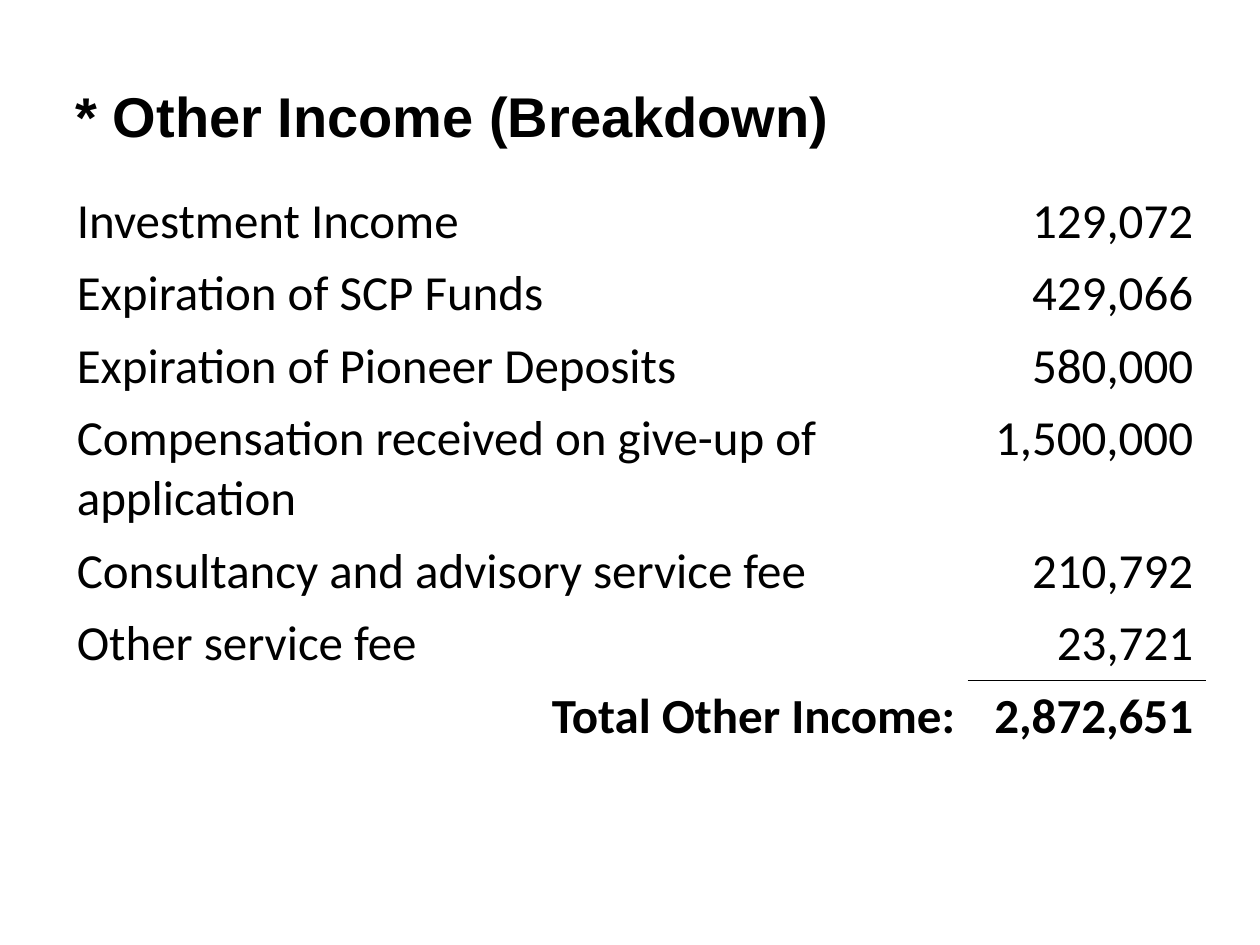
import pptx
import pptx.dml.color
import pptx.enum.text
import pptx.oxml
import pptx.oxml.ns
import pptx.util

Pt = pptx.util.Pt
ALIGN = pptx.enum.text.PP_ALIGN

COLORS = {"text": "000000", "rule": "000000", "background": "FFFFFF"}
TITLE = "* Other Income (Breakdown)"
INCOME = [
    ("Investment Income", "129,072"),
    ("Expiration of SCP Funds", "429,066"),
    ("Expiration of Pioneer Deposits", "580,000"),
    ("Compensation received on give-up of application", "1,500,000"),
    ("Consultancy and advisory service fee", "210,792"),
    ("Other service fee", "23,721"),
]
TOTAL = ("Total Other Income:", "2,872,651")

TABLE_LEFT, TABLE_TOP = 36.72, 105.84
COLUMN_WIDTHS = (516.24, 136.08)
ROW_HEIGHT = 37.44
NO_STYLE_NO_GRID = "{2D5ABB26-0587-4C30-8999-92F81FD0307C}"


def format_text(text_frame, alignment, font_name, size, bold):
    paragraph = text_frame.paragraphs[0]
    paragraph.alignment = alignment
    font = paragraph.runs[0].font
    font.name, font.size, font.bold = font_name, Pt(size), bold
    font.color.rgb = pptx.dml.color.RGBColor.from_string(COLORS["text"])


def add_border(cell, side):
    """Draw a 1 pt rule on one side of a cell: "T" or "B"."""
    border = pptx.oxml.parse_xml(
        f'<a:ln{side} {pptx.oxml.ns.nsdecls("a")} w="{Pt(1)}"><a:solidFill>'
        f'<a:srgbClr val="{COLORS["rule"]}"/></a:solidFill></a:ln{side}>'
    )
    cell._tc.get_or_add_tcPr().insert(0, border)


def add_title(slide):
    title = slide.shapes.title
    title.left, title.top = Pt(36), Pt(37.44)
    title.width, title.height = Pt(684), Pt(56.88)
    title.text_frame.text = TITLE
    title.text_frame.vertical_anchor = pptx.enum.text.MSO_ANCHOR.MIDDLE
    format_text(title.text_frame, ALIGN.LEFT, "Arial", 32, True)


def add_income_table(slide):
    rows = INCOME + [TOTAL]
    frame = slide.shapes.add_table(
        len(rows), len(COLUMN_WIDTHS), Pt(TABLE_LEFT), Pt(TABLE_TOP),
        Pt(sum(COLUMN_WIDTHS)), Pt(ROW_HEIGHT * len(rows)),
    )
    table = frame.table
    table.first_row = table.horz_banding = False
    table._tbl.tblPr.find(pptx.oxml.ns.qn("a:tableStyleId")).text = NO_STYLE_NO_GRID
    for column, width in zip(table.columns, COLUMN_WIDTHS):
        column.width = Pt(width)

    for row_index, row in enumerate(rows):
        is_total = row is TOTAL
        table.rows[row_index].height = Pt(ROW_HEIGHT)
        for column_index, text in enumerate(row):
            cell = table.cell(row_index, column_index)
            cell.fill.background()
            cell.text_frame.text = text
            alignment = ALIGN.RIGHT if is_total or column_index else ALIGN.LEFT
            format_text(cell.text_frame, alignment, "Calibri", 28, is_total)

    add_border(table.cell(len(INCOME) - 1, 1), "B")
    add_border(table.cell(len(INCOME), 1), "T")


def main():
    presentation = pptx.Presentation()
    presentation.slide_width, presentation.slide_height = Pt(720), Pt(540)
    slide = presentation.slides.add_slide(presentation.slide_layouts[5])
    background = slide.background.fill
    background.solid()
    background.fore_color.rgb = pptx.dml.color.RGBColor.from_string(COLORS["background"])
    add_title(slide)
    add_income_table(slide)
    presentation.save("out.pptx")


if __name__ == "__main__":
    main()
